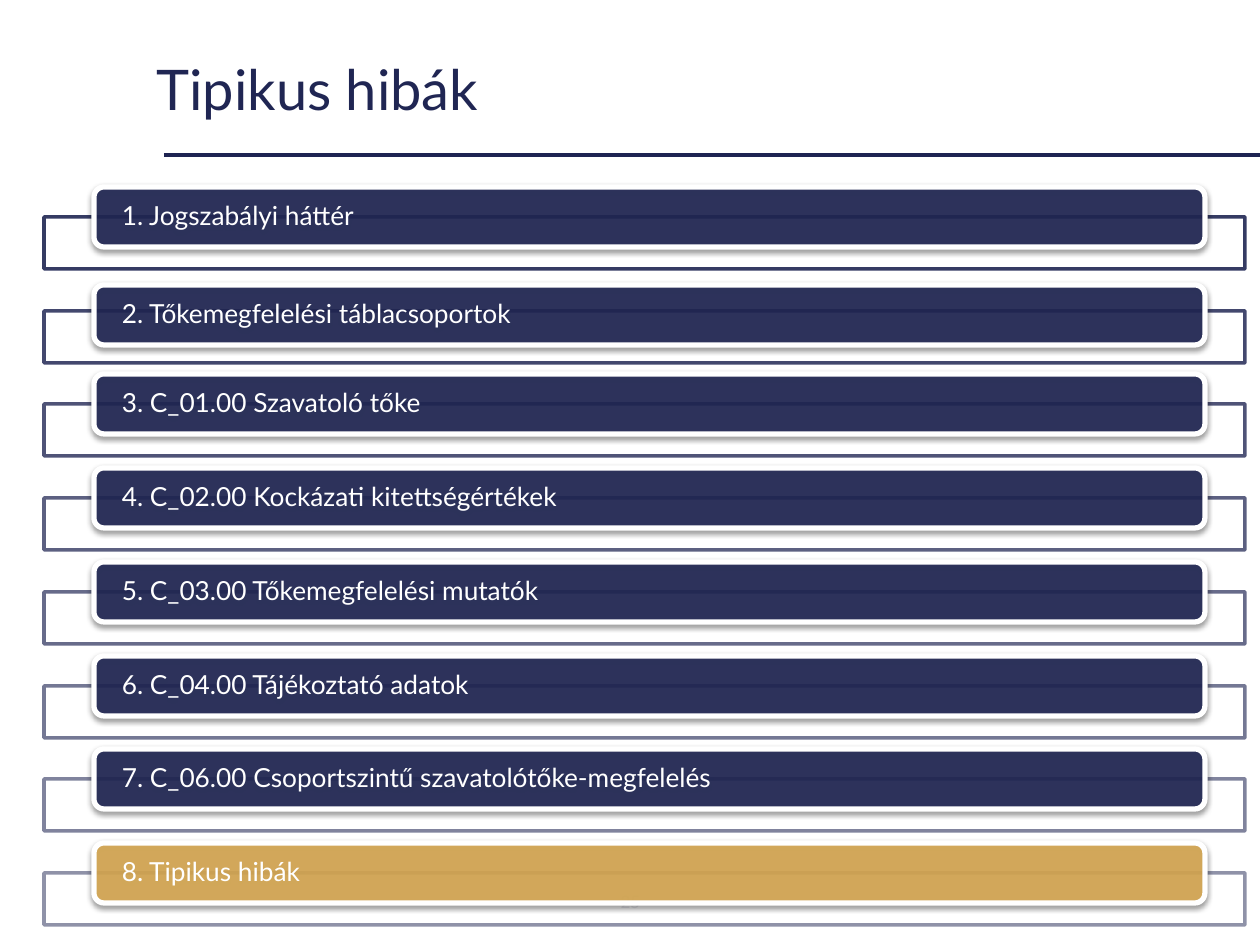
from lxml.etree import SubElement
from pptx import Presentation
from pptx.dml.color import RGBColor
from pptx.enum.shapes import MSO_CONNECTOR as Connector, MSO_SHAPE as Shape
from pptx.enum.text import MSO_ANCHOR as Anchor, PP_ALIGN as Align
from pptx.oxml.ns import qn
from pptx.util import Emu, Pt

NAVY = RGBColor(0x20, 0x26, 0x53)
RULE_NAVY = RGBColor(0x1E, 0x24, 0x52)
GOLD = RGBColor(0xD7, 0xA8, 0x52)
WHITE = RGBColor(0xFF, 0xFF, 0xFF)

TITLE = "Tipikus hibák"
PAGE_NUMBER = "25"
CHAPTERS = [
    ("1. Jogszabályi háttér", NAVY, 0),
    ("2. Tőkemegfelelési táblacsoportok", NAVY, 4),
    ("3. C_01.00 Szavatoló tőke", NAVY, 0),
    ("4. C_02.00 Kockázati kitettségértékek", NAVY, 0),
    ("5. C_03.00 Tőkemegfelelési mutatók", NAVY, 0),
    ("6. C_04.00 Tájékoztató adatok", NAVY, 0),
    ("7. C_06.00 Csoportszintű szavatolótőke-megfelelés", NAVY, 0),
    ("8. Tipikus hibák", GOLD, 0),
]

TITLE_FONT = {"name": "Lato", "size": Pt(32), "color": NAVY}
CHAPTER_FONT = {"name": "Lato", "size": Pt(15), "color": WHITE}
NUMBER_FONT = {"name": "Calibri", "size": Pt(11), "color": NAVY}
FIRST_FRAME, LAST_FRAME, BAR_RISE = 217, 873, 30
FIRST_ALPHA, LAST_ALPHA, FILL_ALPHA = 90, 50, 90


def px(count):
    return Emu(count * 914400 // 126)


def set_alpha(holder, percent):
    color = holder.find(".//" + qn("a:srgbClr"))
    SubElement(color, qn("a:alpha"), val=str(round(percent * 1000)))


def write(box, text, font, align=Align.LEFT, spacing=1.0, insets=None):
    frame = box.text_frame
    frame.word_wrap = True
    frame.vertical_anchor = Anchor.MIDDLE
    for side, inset in (insets or {}).items():
        setattr(frame, "margin_" + side, px(inset))
    para = frame.paragraphs[0]
    para.alignment = align
    para.line_spacing = spacing
    span = para.add_run()
    span.text = text
    for key, value in font.items():
        if key == "color":
            span.font.color.rgb = value
        else:
            setattr(span.font, key, value)


def add_panel(page, kind, place, fill, line, width, line_alpha=100):
    panel = page.shapes.add_shape(kind, *map(px, place))
    panel.shadow.inherit = False
    panel.fill.solid()
    panel.fill.fore_color.rgb = fill
    panel.line.color.rgb = line
    panel.line.width = Pt(width)
    props = panel._element.spPr
    set_alpha(props.find(qn("a:solidFill")), FILL_ALPHA)
    if line_alpha < 100:
        set_alpha(props.find(qn("a:ln")), line_alpha)
    return panel


def add_shadow(panel):
    effects = panel._element.spPr.find(qn("a:effectLst"))
    shadow = SubElement(effects, qn("a:outerShdw"), blurRad=str(Pt(3.1)),
                        dist=str(Pt(1.6)), dir="5400000", rotWithShape="0")
    color = SubElement(shadow, qn("a:srgbClr"), val="000000")
    SubElement(color, qn("a:alpha"), val="38000")


def main():
    deck = Presentation()
    deck.slide_width, deck.slide_height = px(1260), px(945)
    page = deck.slides.add_slide(deck.slide_layouts[6])

    rule = page.shapes.add_connector(Connector.STRAIGHT, *map(px, (164, 155, 1260, 155)))
    rule.line.color.rgb = RULE_NAVY
    rule.line.width = Pt(2.25)
    SubElement(rule._element.spPr, qn("a:effectLst"))

    title = page.shapes.add_textbox(*map(px, (144, 40, 1027, 105)))
    write(title, TITLE, TITLE_FONT, spacing=0.9)
    number = page.shapes.add_textbox(*map(px, (489, 876, 283, 50)))
    write(number, PAGE_NUMBER, NUMBER_FONT, Align.CENTER)

    steps = len(CHAPTERS) - 1
    for index, (text, color, drop) in enumerate(CHAPTERS):
        top = round(FIRST_FRAME + (LAST_FRAME - FIRST_FRAME) * index / steps)
        alpha = FIRST_ALPHA + (LAST_ALPHA - FIRST_ALPHA) * index / steps
        add_panel(page, Shape.RECTANGLE, (44, top, 1201, 52), WHITE, NAVY, 2, alpha)
        bar = add_panel(page, Shape.ROUNDED_RECTANGLE,
                        (94, top - BAR_RISE + drop, 1111, 60), color, WHITE, 3)
        add_shadow(bar)
        write(bar, text, CHAPTER_FONT, spacing=0.9,
              insets={"left": 25, "top": 0, "right": 49, "bottom": 0})

    deck.save("out.pptx")


if __name__ == "__main__":
    main()
